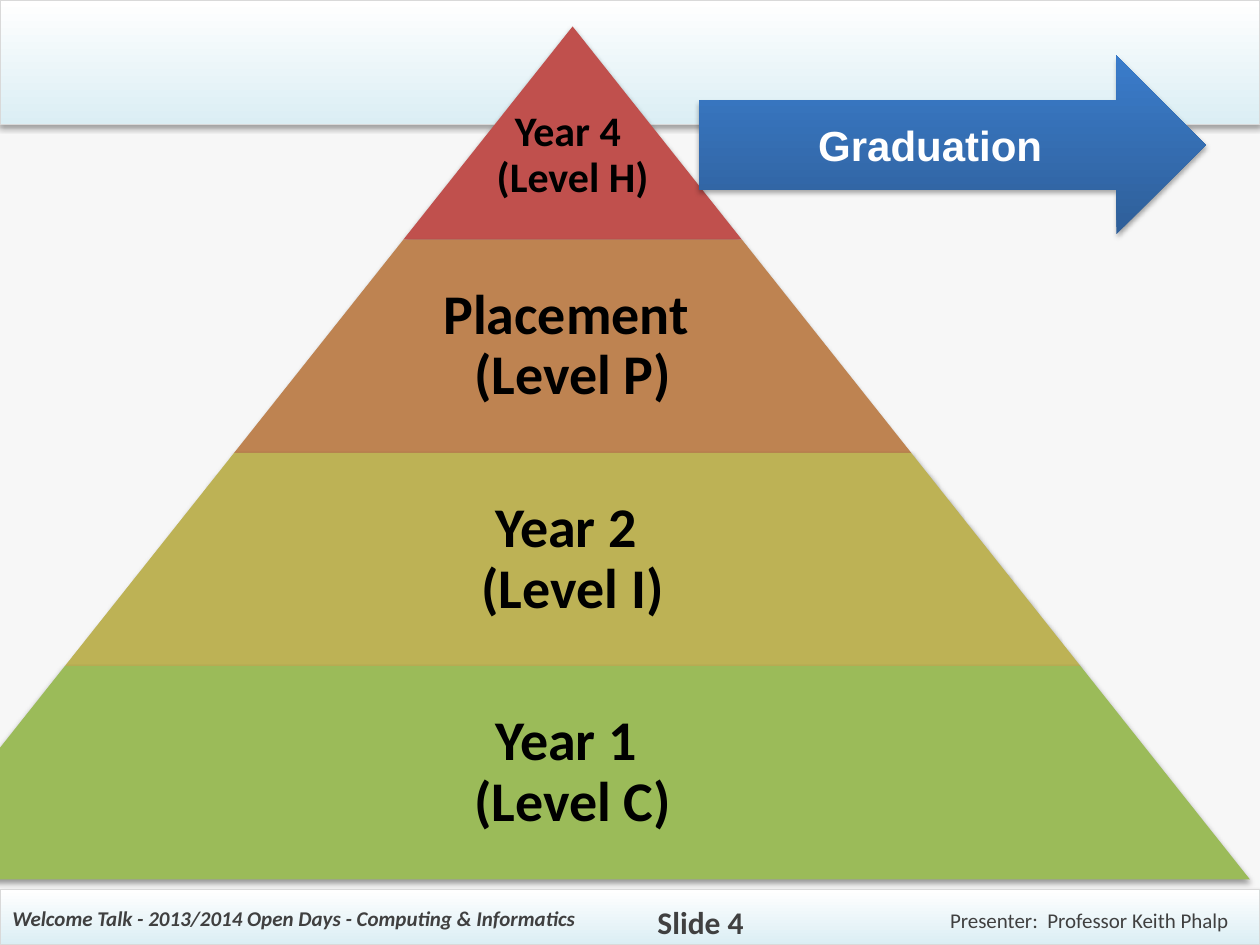
from lxml.etree import SubElement
from pptx import Presentation
from pptx.dml.color import RGBColor
from pptx.enum.shapes import MSO_SHAPE
from pptx.enum.text import MSO_ANCHOR, PP_ALIGN
from pptx.oxml.ns import qn
from pptx.util import Inches, Pt

BLACK = RGBColor(0x00, 0x00, 0x00)
WHITE = RGBColor(0xFF, 0xFF, 0xFF)
DARK_GREY = RGBColor(0x40, 0x40, 0x40)
LIGHT_GREY = RGBColor(0xD9, 0xD9, 0xD9)
BACKGROUND = RGBColor(0xF7, 0xF7, 0xF7)
PALE_BLUE = RGBColor(0xDB, 0xEE, 0xF4)
DEEP_BLUE = RGBColor(0x2F, 0x5F, 0x99)
BRIGHT_BLUE = RGBColor(0x3A, 0x7C, 0xCB)
RED = RGBColor(0xC0, 0x50, 0x4D)
BROWN = RGBColor(0xBE, 0x83, 0x51)
OCHRE = RGBColor(0xBD, 0xB2, 0x55)
GREEN = RGBColor(0x9B, 0xBB, 0x59)

BANDS = [(0, 0, 10, 0.99), (0, 7.06, 10, 0.44)]
FOOTERS = [
    ("Welcome Talk - 2013/2014 Open Days - Computing & Informatics",
     (0, 7.14, 5.16, 0.3), PP_ALIGN.LEFT, {"size": Pt(12), "bold": True, "italic": True}),
    ("Presenter:  Professor Keith Phalp",
     (3.9, 7.15, 5.95, 0.3), PP_ALIGN.RIGHT, {"size": Pt(12)}),
    ("Slide 4", (5.12, 7.12, 2.33, 0.4), PP_ALIGN.LEFT, {"size": Pt(18), "bold": True}),
]
LEVELS = [
    ("Year 4 \v(Level H)", RED, 24, 1, 0.4),
    ("Placement \v(Level P)", BROWN, 32, 0.65, 0.04),
    ("Year 2 \v(Level I)", OCHRE, 32, 0.65, 0.04),
    ("Year 1 \v(Level C)", GREEN, 32, 0.65, 0.04),
]
PYRAMID_CENTER, PYRAMID_TOP = 4.545, 0.21
LEVEL_HEIGHT, LEVEL_WIDTH_STEP = 1.6925, 2.6875
ARROW = ("Graduation", (5.55, 0.44, 4.02, 1.42))


def place(box):
    return [Inches(value) for value in box]


def add_shadow(shape, opacity, distance):
    effects = SubElement(shape._element.spPr, qn("a:effectLst"))
    shadow = SubElement(effects, qn("a:outerShdw"), blurRad=str(Pt(3.1)),
                        dist=str(Pt(distance)), dir="5400000", rotWithShape="0")
    color = SubElement(shadow, qn("a:srgbClr"), val=str(BLACK))
    SubElement(color, qn("a:alpha"), val=str(opacity * 1000))


def add_figure(shapes, kind, box, colors, line=None, opacity=35, distance=1.8):
    shape = shapes.add_shape(kind, *place(box))
    if len(colors) == 1:
        shape.fill.solid()
        shape.fill.fore_color.rgb = colors[0]
    else:
        shape.fill.gradient()
        shape.fill.gradient_angle = 90
        for stop, color, position in zip(shape.fill.gradient_stops, colors, (0, 1)):
            stop.color.rgb = color
            stop.position = position
    if line is None:
        shape.line.fill.background()
    else:
        shape.line.color.rgb = line
        shape.line.width = Pt(0.75)
    add_shadow(shape, opacity, distance)
    return shape


def write_text(shape, text, alignment, color, font_format, frame_format=None, spacing=None):
    frame = shape.text_frame
    frame.word_wrap = True
    for name, value in (frame_format or {}).items():
        setattr(frame, name, value)
    paragraph = frame.paragraphs[0]
    paragraph.text = text
    paragraph.alignment = alignment
    paragraph.line_spacing = spacing
    for run in paragraph.runs:
        for name, value in {"name": "Calibri", **font_format}.items():
            setattr(run.font, name, value)
        run.font.color.rgb = color


def add_pyramid(slide):
    group = slide.shapes.add_group_shape()
    for index, (text, color, size, text_share, inset_top) in enumerate(LEVELS):
        width = LEVEL_WIDTH_STEP * (index + 1)
        top = PYRAMID_TOP + LEVEL_HEIGHT * index
        level = add_figure(group.shapes, MSO_SHAPE.TRAPEZOID,
                           (PYRAMID_CENTER - width / 2, top, width, LEVEL_HEIGHT),
                           [color], opacity=38, distance=1.6)
        level.adjustments[0] = LEVEL_WIDTH_STEP / 2 / LEVEL_HEIGHT
        text_width = width * text_share
        label = group.shapes.add_textbox(
            *place((PYRAMID_CENTER - text_width / 2, top, text_width, LEVEL_HEIGHT)))
        margin = Inches(0.04)
        write_text(label, text, PP_ALIGN.CENTER, BLACK, {"size": Pt(size), "bold": True},
                   {"vertical_anchor": MSO_ANCHOR.MIDDLE, "margin_left": margin,
                    "margin_right": margin, "margin_bottom": margin,
                    "margin_top": Inches(inset_top)}, 0.9)


def main():
    presentation = Presentation()
    presentation.slide_width, presentation.slide_height = Inches(10), Inches(7.5)
    slide = presentation.slides.add_slide(presentation.slide_layouts[6])
    slide.background.fill.solid()
    slide.background.fill.fore_color.rgb = BACKGROUND

    for box in BANDS:
        add_figure(slide.shapes, MSO_SHAPE.RECTANGLE, box, [PALE_BLUE, WHITE], LIGHT_GREY)
    for text, box, alignment, font_format in FOOTERS:
        footer = slide.shapes.add_textbox(*place(box))
        write_text(footer, text, alignment, DARK_GREY, font_format)

    add_pyramid(slide)

    text, box = ARROW
    arrow = add_figure(slide.shapes, MSO_SHAPE.RIGHT_ARROW, box, [DEEP_BLUE, BRIGHT_BLUE])
    write_text(arrow, text, PP_ALIGN.CENTER, WHITE,
               {"name": "Arial", "size": Pt(24), "bold": True},
               {"vertical_anchor": MSO_ANCHOR.MIDDLE})

    presentation.save("out.pptx")


if __name__ == "__main__":
    main()
